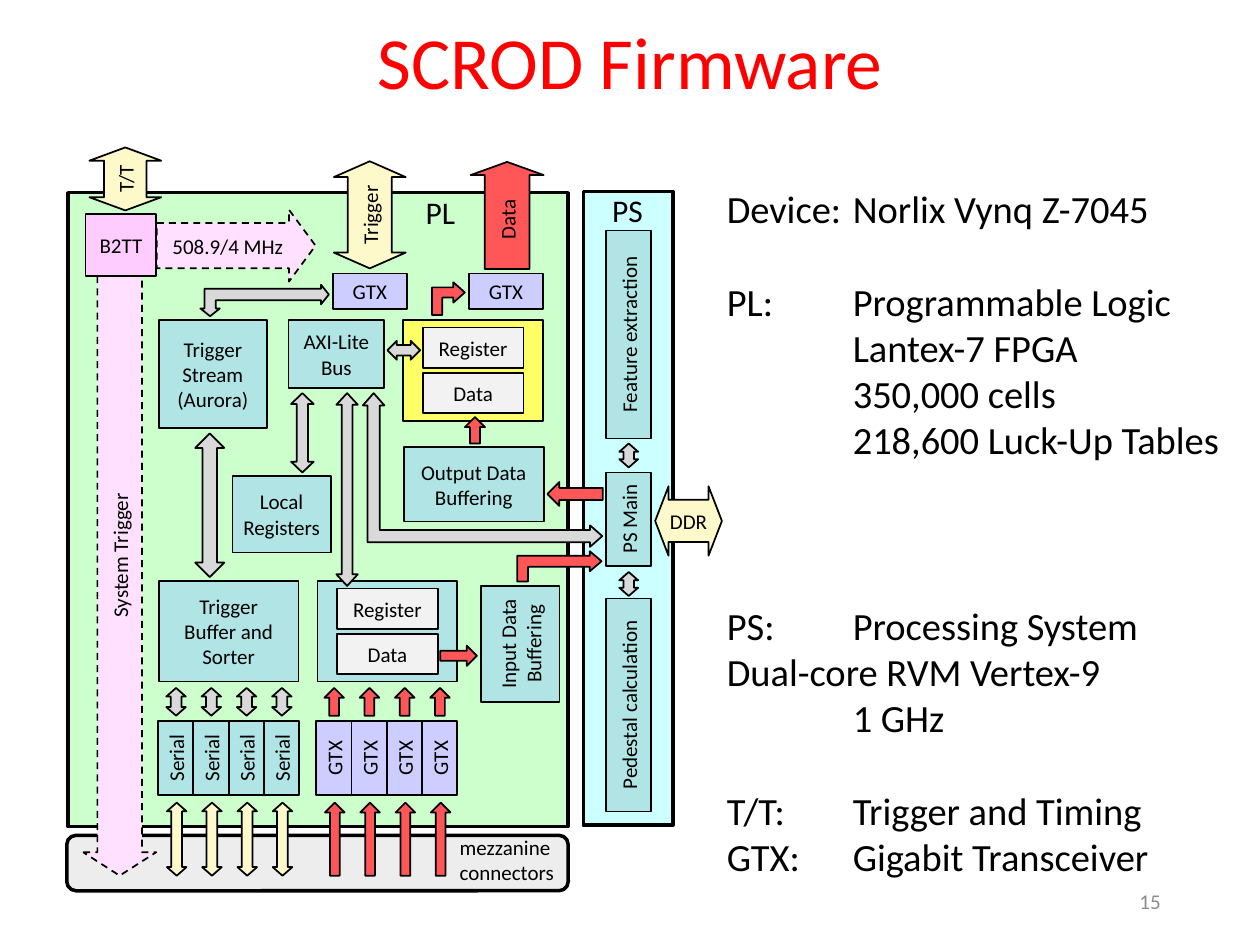
import lxml.etree
import pptx
import pptx.util
import pptx.dml.color
import pptx.enum.dml
import pptx.enum.shapes
import pptx.enum.text
import pptx.oxml.ns

RGB = pptx.dml.color.RGBColor
SHAPE = pptx.enum.shapes.MSO_SHAPE
ALIGN = pptx.enum.text.PP_ALIGN
ANCHOR = pptx.enum.text.MSO_ANCHOR
Pt = pptx.util.Pt
qn = pptx.oxml.ns.qn

# The slide is a grid of 100 columns and 75 rows
WIDTH, HEIGHT = pptx.util.Inches(10), pptx.util.Inches(7.5)
COLUMN, ROW = WIDTH / 100, HEIGHT / 75
FONT = "Calibri"

BLACK = RGB(0x00, 0x00, 0x00)
RED = RGB(0xFF, 0x00, 0x00)
NUMBER_GRAY = RGB(0x8C, 0x8C, 0x8C)
LOGIC_GREEN = RGB(0xCC, 0xFF, 0xCC)
SYSTEM_CYAN = RGB(0xCC, 0xFF, 0xFF)
TEAL = RGB(0xB1, 0xE5, 0xE5)
LILAC = RGB(0xCD, 0xCD, 0xFF)
PINK = RGB(0xFF, 0xCC, 0xFF)
PALE_PINK = RGB(0xFF, 0xE1, 0xFF)
YELLOW = RGB(0xFF, 0xFF, 0x66)
CREAM = RGB(0xFD, 0xF9, 0xCB)
OFF_WHITE = RGB(0xF2, 0xF2, 0xF2)
PALE_GRAY = RGB(0xED, 0xED, 0xED)
BUS_GRAY = RGB(0xD9, 0xD9, 0xD9)
DATA_RED = RGB(0xFF, 0x57, 0x57)

SMALL_HEAD = (0.55, 0.44)

# Text, gap before it in blank lines
NOTES = [
    ("Device:\tNorlix Vynq Z-7045", 0),
    ("PL:\tProgrammable Logic", 1),
    ("\tLantex-7 FPGA", 0),
    ("\t350,000 cells", 0),
    ("\t218,600 Luck-Up Tables", 0),
    ("PS:\tProcessing System\vDual-core RVM Vertex-9", 3),
    ("\t1 GHz", 0),
    ("T/T:\tTrigger and Timing", 1),
    ("GTX:\tGigabit Transceiver", 0),
]


def place(left, top, width, height):
    """Turn grid columns and rows into slide lengths."""
    return (round(left * COLUMN), round(top * ROW),
            round(width * COLUMN), round(height * ROW))


def style(frame, size, color, align):
    for para in frame.paragraphs:
        para.alignment = align
        para.font.name = FONT
        para.font.size = Pt(size)
        para.font.color.rgb = color


def add_label(page, at, text, size, color=BLACK, align=ALIGN.LEFT,
              anchor=ANCHOR.TOP, wrap=True):
    frame = page.shapes.add_textbox(*place(*at)).text_frame
    frame.word_wrap = wrap
    frame.vertical_anchor = anchor
    frame.text = text
    style(frame, size, color, align)
    return frame


def add_block(page, at, fill, text="", upright=False, kind=SHAPE.RECTANGLE,
              line=1, adjust=(), dashed=False):
    """Add an outlined shape; upright text reads from bottom to top."""
    block = page.shapes.add_shape(kind, *place(*at))
    block.shadow.inherit = False
    block.fill.solid()
    block.fill.fore_color.rgb = fill
    block.line.color.rgb = BLACK
    block.line.width = Pt(line)
    if dashed:
        block.line.dash_style = pptx.enum.dml.MSO_LINE.DASH
    for index, value in enumerate(adjust):
        block.adjustments[index] = value
    if text:
        frame = block.text_frame
        frame.margin_left = frame.margin_right = 0
        frame.margin_top = frame.margin_bottom = 0
        frame.word_wrap = True
        frame.vertical_anchor = ANCHOR.MIDDLE
        frame.text = text
        style(frame, 12, BLACK, ALIGN.CENTER)
        if upright:
            block.element.txBody.bodyPr.set("vert", "vert270")
    return block


def add_upright_two_way(page, at, fill, adjust, text=""):
    """Add a vertical double arrow as a quarter-turned horizontal one."""
    left, top, width, height = at
    shift = (height - width) / 2
    arrow = add_block(page, (left - shift, top + shift, height, width), fill, text,
                      kind=SHAPE.LEFT_RIGHT_ARROW, adjust=adjust)
    arrow.rotation = 270


def add_bent_arrow(page, at, fill, kind, adjust, rotation, mirrored=False):
    arrow = add_block(page, at, fill, kind=kind, adjust=adjust)
    arrow.rotation = rotation
    if mirrored:
        arrow.element.spPr.xfrm.set("flipH", "1")


def add_buffer(page, left, top, fill):
    """Add a buffer that holds a register and a data cell."""
    add_block(page, (left, top, 11.1, 8), fill)
    for row, text in enumerate(("Register", "Data")):
        add_block(page, (left + 1.55, top + 0.6 + 3.6 * row, 8, 3.2), OFF_WHITE, text)


def add_lanes(page, left, text, fill, inner_fill, outer_fill, two_way):
    """Add four lanes, each with an arrow above and one below."""
    for lane in range(4):
        x = left + 2.8 * lane
        add_block(page, (x, 57.2, 2.8, 5.9), fill, text, upright=True)
        for at, color in (((x + 0.65, 54.6, 1.55, 2.2), inner_fill),
                          ((x + 0.7, 63.7, 1.55, 5.8), outer_fill)):
            if two_way:
                add_upright_two_way(page, at, color, SMALL_HEAD)
            else:
                add_block(page, at, color, kind=SHAPE.UP_ARROW)


def add_regions(page):
    add_block(page, (5.4, 15.3, 39.7, 50.3), LOGIC_GREEN, line=2)
    add_block(page, (46.3, 15.2, 7.1, 50.3), SYSTEM_CYAN, line=2)
    add_block(page, (5.3, 66.3, 39.8, 4.4), PALE_GRAY, kind=SHAPE.ROUNDED_RECTANGLE, line=2)
    add_label(page, (32.8, 14.8, 4.4, 4), "PL", 18, wrap=False)
    add_label(page, (47.6, 14.7, 4.5, 4), "PS", 18, wrap=False)
    add_label(page, (35.5, 65.7, 10.9, 4.8), "mezzanine\nconnectors", 12)


def add_modules(page):
    # Processing system
    for top, height, text in ((18.3, 16.5, "Feature extraction"),
                              (37.5, 7.4, "PS Main"),
                              (47.5, 16.9, "Pedestal calculation")):
        add_block(page, (48.1, top, 3.6, height), TEAL, text, upright=True)
    # Programmable logic
    for left in (26.4, 37.2):
        add_block(page, (left, 21.7, 5.9, 2.8), LILAC, "GTX")
    for at, text in (((12.6, 25.4, 8.6, 8.6), "Trigger Stream\n(Aurora)"),
                     ((22.9, 25.4, 7.6, 5.4), "AXI-Lite\nBus"),
                     ((18.45, 37.75, 7.8, 6.1), "Local Registers"),
                     ((32.05, 35.5, 11.1, 5.9), "Output Data Buffering"),
                     ((12.6, 46.1, 11.1, 8), "Trigger\vBuffer and\nSorter")):
        add_block(page, at, TEAL, text)
    add_block(page, (38.2, 46.5, 6.2, 9.2), TEAL, "Input Data Buffering", upright=True)
    add_buffer(page, 32, 25.4, YELLOW)
    add_buffer(page, 25.2, 46.1, TEAL)
    # Links to the mezzanine connectors
    add_lanes(page, 12.55, "Serial", TEAL, BUS_GRAY, CREAM, two_way=True)
    add_lanes(page, 25.1, "GTX", LILAC, DATA_RED, DATA_RED, two_way=False)


def add_signals(page):
    # Timing and trigger distribution
    add_upright_two_way(page, (7.1, 11.7, 5.7, 5), CREAM, (0.59, 0.21), "T/T")
    add_block(page, (12.45, 16.65, 12.6, 5.7), PALE_PINK, "508.9/4 MHz",
              kind=SHAPE.RIGHT_ARROW, adjust=(0.63, 0.37), dashed=True)
    add_block(page, (6.6, 19.8, 5.8, 49.7), PALE_PINK, "System Trigger", True,
              SHAPE.DOWN_ARROW, adjust=(0.61, 0.32), dashed=True)
    add_block(page, (6.8, 17, 5.6, 4.9), PINK, "B2TT")
    # Outside links
    add_upright_two_way(page, (26.5, 12.8, 5.7, 8.5), CREAM, (0.61, 0.22), "Trigger")
    add_block(page, (37.35, 12.85, 5.8, 8.5), DATA_RED, "Data", True,
              SHAPE.UP_ARROW, adjust=(0.61, 0.18))
    add_block(page, (52, 38.6, 5.3, 5.5), CREAM, "DDR",
              kind=SHAPE.LEFT_RIGHT_ARROW, adjust=(0.61, 0.2))
    # Two-way buses
    for at, adjust in (((15.5, 34.4, 2.3, 11.4), (0.5, 0.5)),
                       ((23.1, 31.2, 1.8, 6.3), (0.5, 0.48)),
                       ((26.7, 31.2, 1.7, 15.3), (0.5, 0.54)),
                       ((49.15, 35.2, 1.5, 1.9), SMALL_HEAD),
                       ((49.15, 45.4, 1.5, 1.9), SMALL_HEAD)):
        add_upright_two_way(page, at, BUS_GRAY, adjust)
    add_block(page, (30.75, 27.05, 2.6, 1.5), BUS_GRAY,
              kind=SHAPE.LEFT_RIGHT_ARROW, adjust=(0.55, 0.5))
    for at, adjust, rotation in (((15.9, 22.6, 10.2, 2.5), (0.36, 0.31, 0.25), 180),
                                 ((32.2, 27.8, 12.2, 19), (0.08, 0.07, 0.08), 90)):
        add_bent_arrow(page, at, BUS_GRAY, SHAPE.LEFT_UP_ARROW, adjust, rotation)
    # Data flow
    for at, kind in (((36.9, 33.1, 1.6, 2.1), SHAPE.UP_ARROW),
                     ((43.45, 38.25, 4.4, 1.9), SHAPE.LEFT_ARROW),
                     ((34.95, 51.25, 2.9, 1.6), SHAPE.RIGHT_ARROW)):
        add_block(page, at, DATA_RED, kind=kind)
    for at, adjust in (((34.3, 22.4, 2.6, 2.6), (0.31, 0.31, 0.35)),
                       ((43.2, 41.6, 2.4, 6.7), (0.36, 0.33, 0.39))):
        add_bent_arrow(page, at, DATA_RED, SHAPE.BENT_UP_ARROW, adjust, 90, mirrored=True)


def add_notes_column(page):
    text = "\n".join(line for line, gap in NOTES)
    frame = add_label(page, (56.7, 14.2, 43.2, 56.5), text, 22)
    for para, (line, gap) in zip(frame.paragraphs, NOTES):
        para.space_before = Pt(26.5 * gap)
        # One tab stop, placed before the font defaults as the schema asks
        stops = lxml.etree.Element(qn("a:tabLst"))
        lxml.etree.SubElement(stops, qn("a:tab"), pos=str(round(10 * COLUMN)), algn="l")
        para.font._element.getparent().find(qn("a:defRPr")).addprevious(stops)


def main():
    deck = pptx.Presentation()
    deck.slide_width, deck.slide_height = WIDTH, HEIGHT
    page = deck.slides.add_slide(deck.slide_layouts[6])
    title = add_label(page, (0, 0.1, 100, 10.3), "SCROD Firmware", 42, RED,
                      ALIGN.CENTER, ANCHOR.MIDDLE)
    title.paragraphs[0].line_spacing = 0.9
    add_notes_column(page)
    add_label(page, (70.6, 69.5, 22.5, 4), "15", 12, NUMBER_GRAY,
              ALIGN.RIGHT, ANCHOR.MIDDLE)
    add_regions(page)
    add_modules(page)
    add_signals(page)
    deck.save("out.pptx")


if __name__ == "__main__":
    main()
